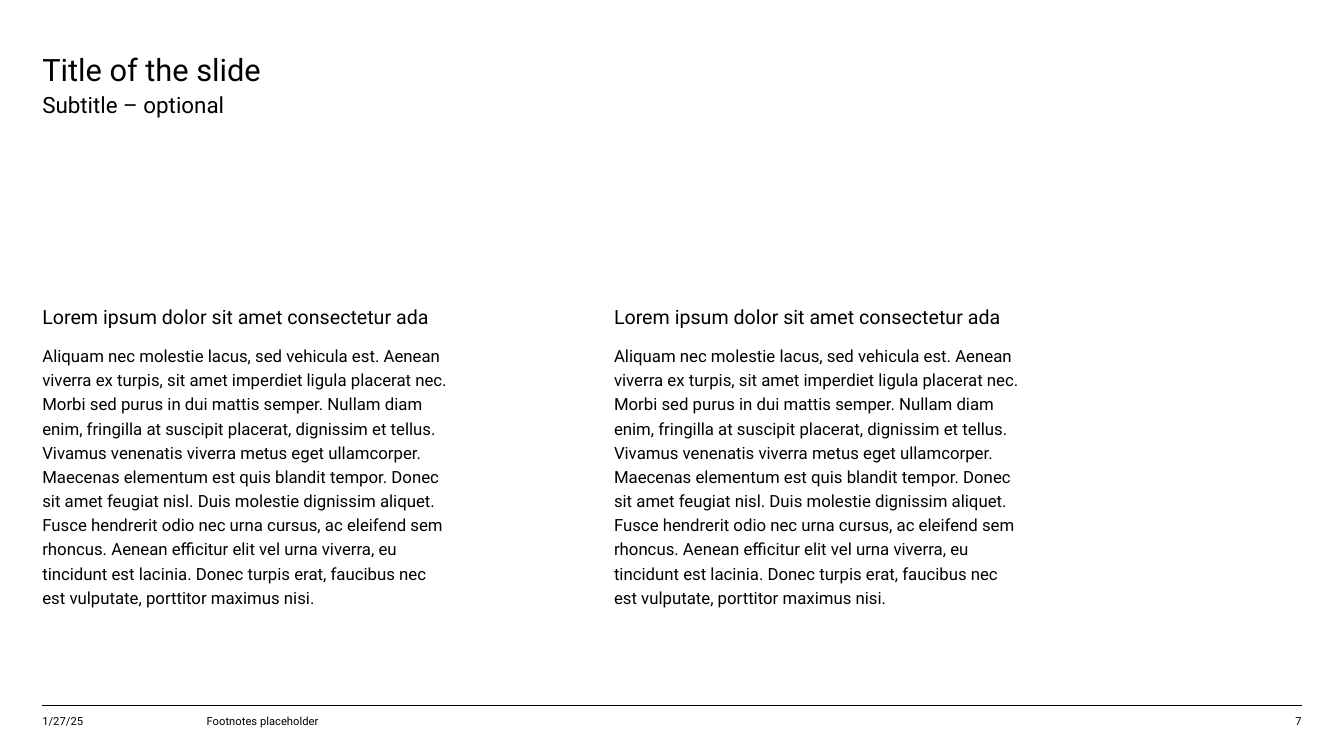
from dataclasses import dataclass, field
from typing import Any

from lxml.etree import SubElement
from pptx import Presentation
from pptx.dml.color import RGBColor
from pptx.enum.shapes import MSO_CONNECTOR
from pptx.enum.text import MSO_ANCHOR, PP_ALIGN
from pptx.oxml.ns import qn
from pptx.util import Inches, Pt


@dataclass(frozen=True)
class Theme:
    font: str = "Roboto"
    ink: RGBColor = RGBColor(0, 0, 0)
    paper: RGBColor = RGBColor(255, 255, 255)
    title: int = 22
    subtitle: int = 16
    heading: int = 14
    body: int = 12
    footer: int = 8
    rule: float = 0.75


@dataclass(frozen=True)
class Label:
    text: str
    left: float
    top: float
    width: float
    height: float
    size: int
    frame: dict[str, Any] = field(default_factory=dict)
    para: dict[str, Any] = field(default_factory=dict)
    filled: bool = False


THEME = Theme()
LEFT, RIGHT = 0.42, 12.91
COLUMNS = (LEFT, 6.09)
WIDTH = 4.03
FOOT = 7.09
HEADING = "Lorem ipsum dolor sit amet consectetur ada"
BODY = (
    "Aliquam nec molestie lacus, sed vehicula est. Aenean viverra ex turpis, "
    "sit amet imperdiet ligula placerat nec. Morbi sed purus in dui mattis "
    "semper. Nullam diam enim, fringilla at suscipit placerat, dignissim et "
    "tellus. Vivamus venenatis viverra metus eget ullamcorper. Maecenas "
    "elementum est quis blandit tempor. Donec sit amet feugiat nisl. Duis "
    "molestie dignissim aliquet. Fusce hendrerit odio nec urna cursus, ac "
    "eleifend sem rhoncus. Aenean efficitur elit vel urna viverra, eu "
    "tincidunt est lacinia. Donec turpis erat, faucibus nec est vulputate, "
    "porttitor maximus nisi."
)
HEAD_FRAME = {"vertical_anchor": MSO_ANCHOR.BOTTOM, "margin_bottom": Inches(0.08)}

LABELS = [
    Label("Title of the slide", LEFT, 0.5, 10.86, 0.37, THEME.title),
    Label("Subtitle – optional", LEFT, 0.9, 10.86, 0.3, THEME.subtitle),
    Label("1/27/25", LEFT, FOOT, 1.1, 0.2, THEME.footer),
    Label("Footnotes placeholder", 2.05, FOOT, 9.6, 0.2, THEME.footer),
    Label("7", RIGHT - 0.6, FOOT, 0.6, 0.2, THEME.footer,
          para={"alignment": PP_ALIGN.RIGHT}),
]
for left in COLUMNS:
    LABELS += [
        Label(BODY, left, 3.39, WIDTH, 2.89, THEME.body,
              para={"line_spacing": 1.2}),
        Label(HEADING, left, 3.06, WIDTH, 0.28, THEME.heading,
              HEAD_FRAME, {"line_spacing": Pt(16)}, True),
    ]


def apply(target: Any, values: dict[str, Any]) -> None:
    for name, value in values.items():
        setattr(target, name, value)


def write(slide: Any, label: Label) -> None:
    box = slide.shapes.add_textbox(
        Inches(label.left), Inches(label.top),
        Inches(label.width), Inches(label.height))
    if label.filled:
        box.fill.solid()
        box.fill.fore_color.rgb = THEME.paper
    frame = box.text_frame
    sides = ("left", "top", "right", "bottom")
    apply(frame, {f"margin_{side}": 0 for side in sides}
          | {"word_wrap": True, "vertical_anchor": MSO_ANCHOR.TOP} | label.frame)
    para = frame.paragraphs[0]
    apply(para, label.para)
    run = para.add_run()
    run.text = label.text
    apply(run.font, {"name": THEME.font, "size": Pt(label.size)})
    run.font.color.rgb = THEME.ink


def rule(slide: Any, top: float) -> None:
    line = slide.shapes.add_connector(
        MSO_CONNECTOR.STRAIGHT, Inches(LEFT), Inches(top),
        Inches(RIGHT), Inches(top))
    line.line.color.rgb = THEME.ink
    line.line.width = Pt(THEME.rule)
    SubElement(line._element.spPr, qn("a:effectLst"))


def main() -> None:
    deck = Presentation()
    apply(deck, {"slide_width": Inches(13.33), "slide_height": Inches(7.5)})
    slide = deck.slides.add_slide(deck.slide_layouts[6])
    rule(slide, 7)
    for label in LABELS:
        write(slide, label)
    deck.save("out.pptx")


if __name__ == "__main__":
    main()
